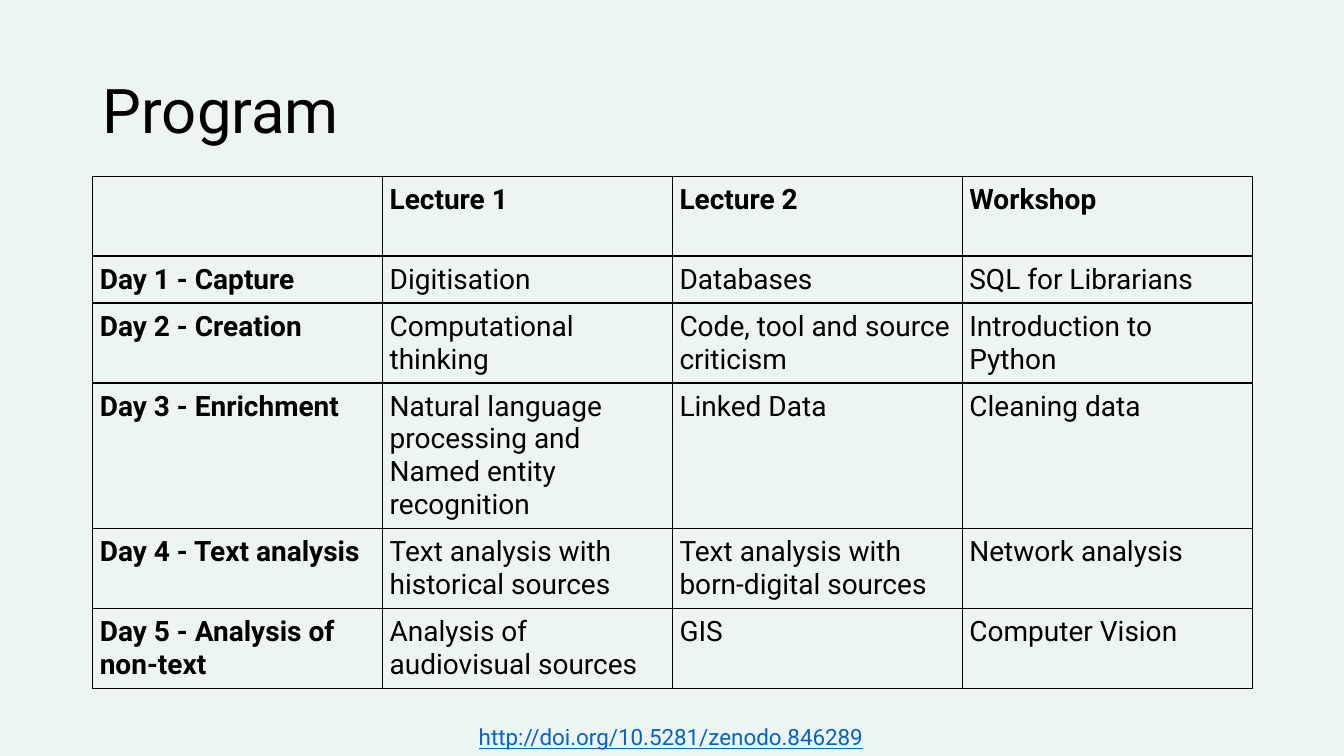
from lxml import etree
from pptx import Presentation
from pptx import util as u
from pptx.dml.color import RGBColor
from pptx.enum import text
from pptx.oxml.ns import qn

WIDTH, HEIGHT = 13.33, 7.5
FONT = "Roboto"
BACKGROUND, INK, LINK = "EDF5F3", "000000", "0563C1"
MARGIN, CONTENT_WIDTH = 0.92, 11.5
CELL_INSET, LINE_HEIGHT = 0.07, 0.325

PROGRAM = [
    ["", "Lecture 1", "Lecture 2", "Workshop"],
    ["Day 1 - Capture", "Digitisation", "Databases", "SQL for Librarians"],
    ["Day 2 - Creation", "Computational thinking",
     "Code, tool and source criticism", "Introduction to Python"],
    ["Day 3 - Enrichment",
     "Natural language processing and Named entity recognition",
     "Linked Data", "Cleaning data"],
    ["Day 4 - Text analysis", "Text analysis with historical sources",
     "Text analysis with born-digital sources", "Network analysis"],
    ["Day 5 - Analysis of non-text", "Analysis of audiovisual sources",
     "GIS", "Computer Vision"],
]
LINES_PER_ROW = [2, 1, 2, 4, 2, 2]


def color(hex_code):
    return RGBColor.from_string(hex_code)


def inches(box):
    return [u.Inches(length) for length in box]


def add_run(paragraph, words, size, hex_code=INK, bold=False, underline=False):
    run = paragraph.add_run()
    run.text = words
    run.font.name, run.font.size = FONT, u.Pt(size)
    run.font.bold, run.font.underline = bold, underline
    run.font.color.rgb = color(hex_code)


def add_title(slide, box):
    title = slide.shapes.title
    title.left, title.top, title.width, title.height = inches(box)
    frame = title.text_frame
    frame.word_wrap = True
    frame.vertical_anchor = text.MSO_ANCHOR.MIDDLE
    heading = frame.paragraphs[0]
    heading.alignment = text.PP_ALIGN.LEFT
    heading.line_spacing = 0.9
    add_run(heading, "Program", 44)


def add_borders(cell):
    properties = cell._tc.get_or_add_tcPr()
    for position, side in enumerate(("a:lnL", "a:lnR", "a:lnT", "a:lnB")):
        line = etree.Element(qn(side), w=str(u.Pt(1)))
        fill = etree.SubElement(line, qn("a:solidFill"))
        etree.SubElement(fill, qn("a:srgbClr"), val=INK)
        properties.insert(position, line)


def add_program_table(slide, left, top, width):
    heights = [n * LINE_HEIGHT + 2 * CELL_INSET for n in LINES_PER_ROW]
    columns = len(PROGRAM[0])
    table = slide.shapes.add_table(
        len(PROGRAM), columns, *inches((left, top, width, sum(heights)))).table
    table.first_row = table.horz_banding = False
    for column in table.columns:
        column.width = u.Inches(width / columns)
    for r, entries in enumerate(PROGRAM):
        table.rows[r].height = u.Inches(heights[r])
        for c, entry in enumerate(entries):
            cell = table.cell(r, c)
            cell.fill.background()
            cell.margin_left = cell.margin_right = u.Inches(CELL_INSET)
            cell.margin_top = cell.margin_bottom = u.Inches(CELL_INSET)
            add_borders(cell)
            if entry:
                add_run(cell.text_frame.paragraphs[0], entry, 20,
                        bold=r == 0 or c == 0)


def add_source(slide, box):
    frame = slide.shapes.add_textbox(*inches(box)).text_frame
    frame.word_wrap = True
    add_run(frame.paragraphs[0], "http://doi.org/10.5281/zenodo.846289", 16,
            LINK, underline=True)


def main():
    deck = Presentation()
    deck.slide_width, deck.slide_height = inches((WIDTH, HEIGHT))
    slide = deck.slides.add_slide(deck.slide_layouts[5])
    slide.background.fill.solid()
    slide.background.fill.fore_color.rgb = color(BACKGROUND)
    add_title(slide, (MARGIN, 0.4, CONTENT_WIDTH, 1.45))
    add_program_table(slide, MARGIN, 1.75, CONTENT_WIDTH)
    add_source(slide, (4.65, 7.13, 4.04, 0.37))
    deck.save("out.pptx")


if __name__ == "__main__":
    main()
